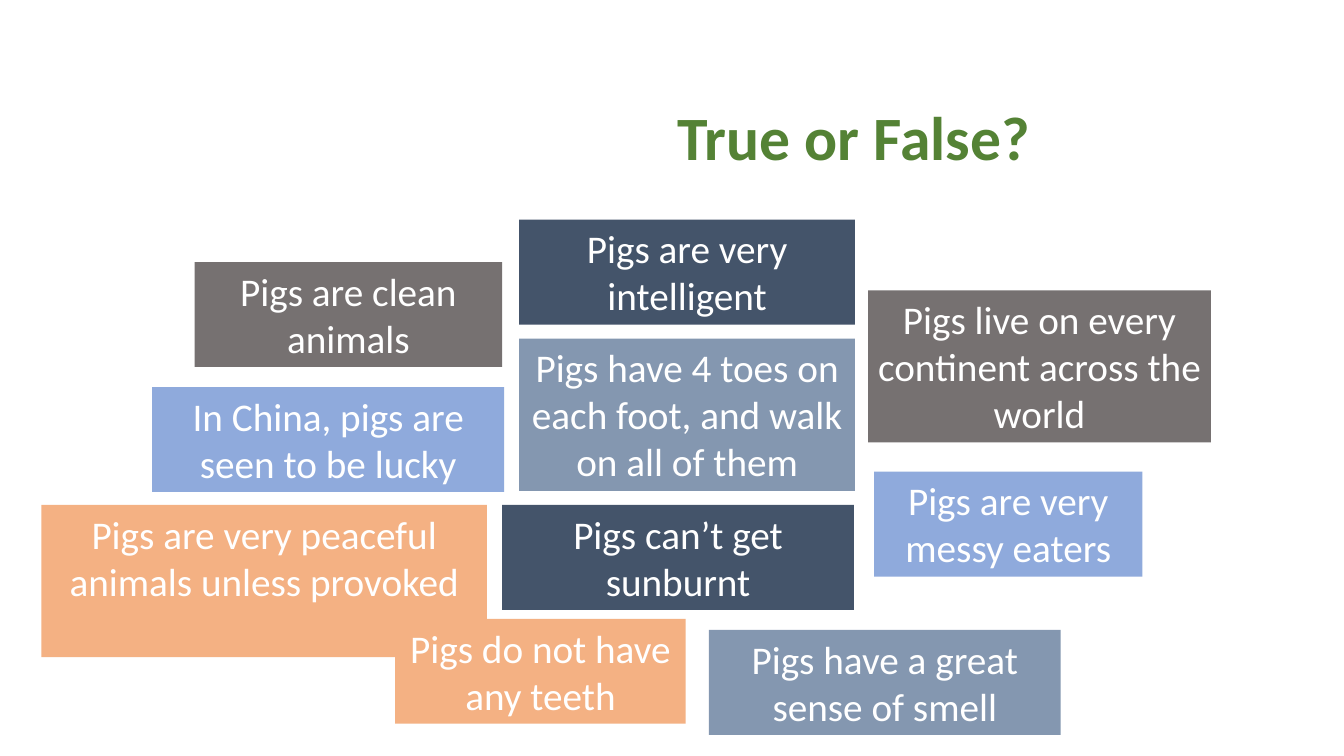
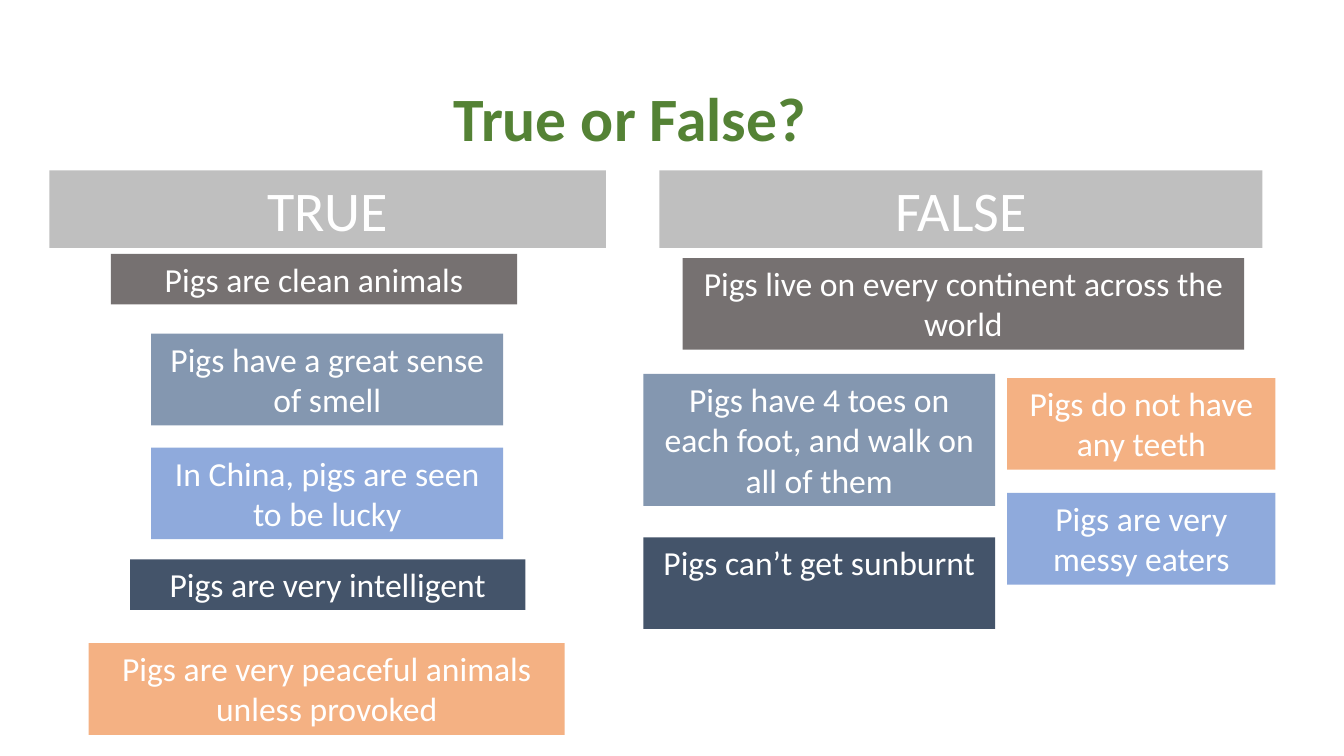
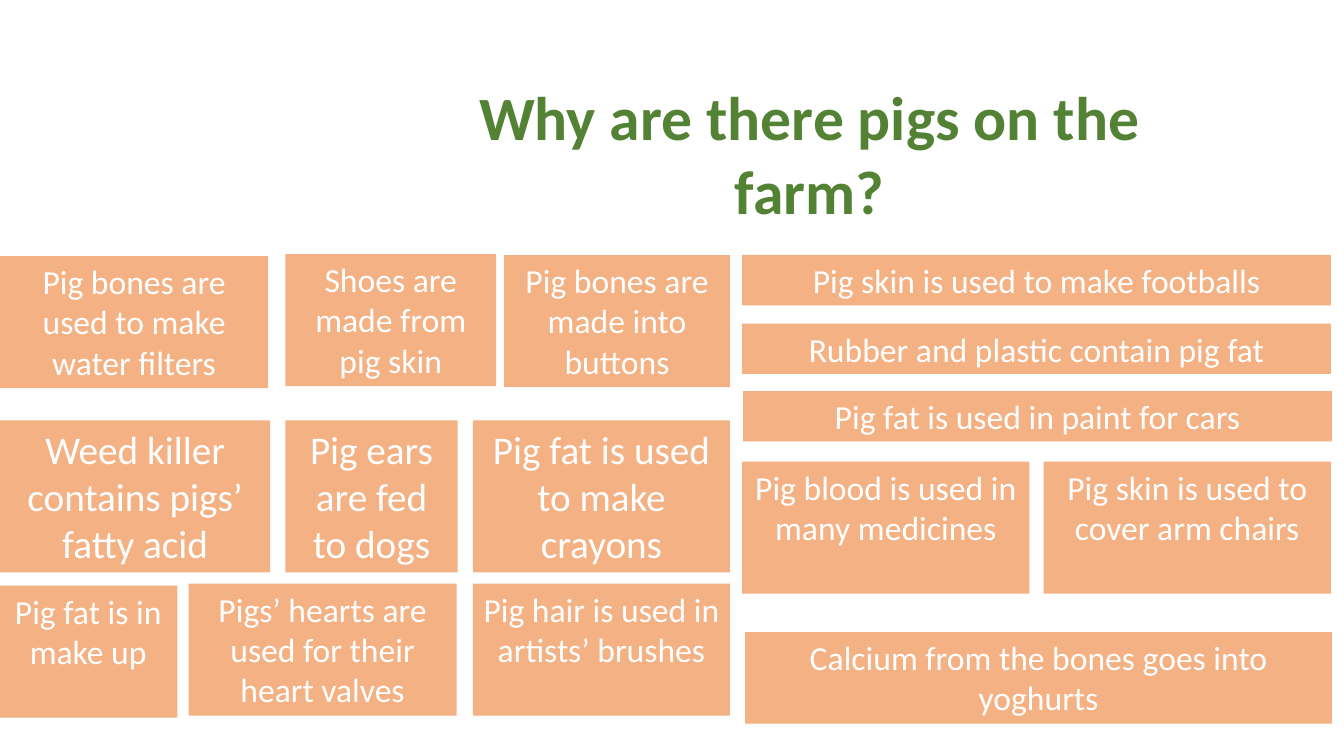
from pptx import Presentation
from pptx import util as u
from pptx.dml.color import RGBColor
from pptx.enum import shapes, text

PX = 9144  # 100 px to the inch
FONT = "Calibri"
COLOURS = {
    "title": "548235", "white": "FFFFFF", "orange": "F4B183", "blue": "8FAADC",
    "navy": "44546A", "slate": "8497B0", "brown": "767171", "grey": "BFBFBF",
}
# Box height in px by text size and number of lines
HEIGHTS = {24: {1: 50, 2: 91, 3: 131}, 28: {2: 104, 3: 151}, 40: {1: 77}}

# Statements sorted on the first two slides
FACTS = {
    "peaceful": ("Pigs are very peaceful animals unless provoked", "orange"),
    "lucky": ("In China, pigs are seen to be lucky", "blue"),
    "clever": ("Pigs are very intelligent", "navy"),
    "smell": ("Pigs have a great sense of smell", "slate"),
    "clean": ("Pigs are clean animals", "brown"),
    "continents": ("Pigs live on every continent across the world", "brown"),
    "toes": ("Pigs have 4 toes on each foot, and walk on all of them", "slate"),
    "messy": ("Pigs are very messy eaters", "blue"),
    "sunburn": ("Pigs can’t get sunburnt", "navy"),
    "teeth": ("Pigs do not have any teeth", "orange"),
}

presentation = Presentation()
presentation.slide_width = 1333 * PX
presentation.slide_height = 750 * PX


def write_text(shape, wording, size, colour, bold=False):
    frame = shape.text_frame
    frame.word_wrap = True
    frame.auto_size = text.MSO_AUTO_SIZE.NONE
    frame.vertical_anchor = text.MSO_ANCHOR.TOP
    paragraph = frame.paragraphs[0]
    paragraph.alignment = text.PP_ALIGN.CENTER
    run = paragraph.add_run()
    run.text = wording
    run.font.name = FONT
    run.font.size = u.Pt(size)
    run.font.bold = bold
    run.font.color.rgb = RGBColor.from_string(COLOURS[colour])


def add_slide(title, left, top, height, boxes):
    slide = presentation.slides.add_slide(presentation.slide_layouts[5])
    heading = slide.shapes.title
    heading.left, heading.top = left * PX, top * PX
    heading.width, heading.height = 804 * PX, height * PX
    write_text(heading, title, 44, "title", bold=True)
    for wording, colour, size, x, y, width, lines in boxes:
        box = slide.shapes.add_shape(
            shapes.MSO_SHAPE.RECTANGLE,
            x * PX, y * PX, width * PX, HEIGHTS[size][lines] * PX)
        box.shadow.inherit = False
        box.fill.solid()
        box.fill.fore_color.rgb = RGBColor.from_string(COLOURS[colour])
        box.line.fill.background()
        write_text(box, wording, size, "white")


# Slide 1: mixed statements (left, top, width, lines)
mixed = {
    "peaceful": (41, 501, 442, 3),
    "lucky": (151, 384, 349, 2),
    "clever": (515, 218, 333, 2),
    "smell": (703, 625, 349, 2),
    "clean": (193, 260, 305, 2),
    "continents": (861, 288, 340, 3),
    "toes": (515, 336, 333, 3),
    "messy": (867, 468, 266, 2),
    "sunburn": (498, 501, 349, 2),
    "teeth": (392, 614, 288, 2),
}
add_slide("True or False?", 445, 93, 84,
          [(*FACTS[name], 28, *place) for name, place in mixed.items()])

# Slide 2: statements under their answers
answers = [
    ("TRUE", "grey", 40, 49, 169, 552, 1),
    ("FALSE", "grey", 40, 654, 169, 598, 1),
]
sorted_facts = {
    "clean": (110, 252, 403, 1),
    "smell": (150, 331, 349, 2),
    "lucky": (150, 444, 349, 2),
    "clever": (129, 555, 392, 1),
    "peaceful": (88, 638, 472, 2),
    "continents": (677, 256, 557, 2),
    "toes": (638, 371, 349, 3),
    "sunburn": (638, 533, 349, 2),
    "teeth": (999, 375, 266, 2),
    "messy": (999, 489, 266, 2),
}
add_slide("True or False?", 223, 74, 84,
          answers + [(*FACTS[name], 24, *place) for name, place in sorted_facts.items()])

# Slide 3: uses of pigs (wording, size, left, top, width, lines)
uses = [
    ("Pig bones are used to make water filters", 24, 0, 254, 266, 3),
    ("Shoes are made from pig skin", 24, 283, 252, 209, 3),
    ("Pig bones are made into buttons", 24, 500, 253, 224, 3),
    ("Weed killer contains pigs’ fatty acid", 28, 0, 417, 268, 3),
    ("Pig ears are fed to dogs", 28, 283, 417, 171, 3),
    ("Pig fat is used to make crayons", 28, 469, 417, 255, 3),
    ("Pig fat is in make up", 24, -1, 581, 177, 3),
    ("Pigs’ hearts are used for their heart valves", 24, 187, 579, 266, 3),
    ("Pig hair is used in artists’ brushes", 24, 469, 579, 255, 3),
    ("Pig skin is used to make footballs", 24, 736, 253, 584, 1),
    ("Rubber and plastic contain pig fat", 24, 736, 321, 584, 1),
    ("Pig fat is used in paint for cars", 24, 737, 388, 584, 1),
    ("Pig blood is used in many medicines", 24, 736, 458, 285, 3),
    ("Pig skin is used to cover arm chairs", 24, 1035, 458, 285, 3),
    ("Calcium from the bones goes into yoghurts", 24, 739, 627, 582, 2),
]
add_slide("Why are there pigs on the farm?", 401, 73, 158,
          [(wording, "orange", *rest) for wording, *rest in uses])

presentation.save("out.pptx")
